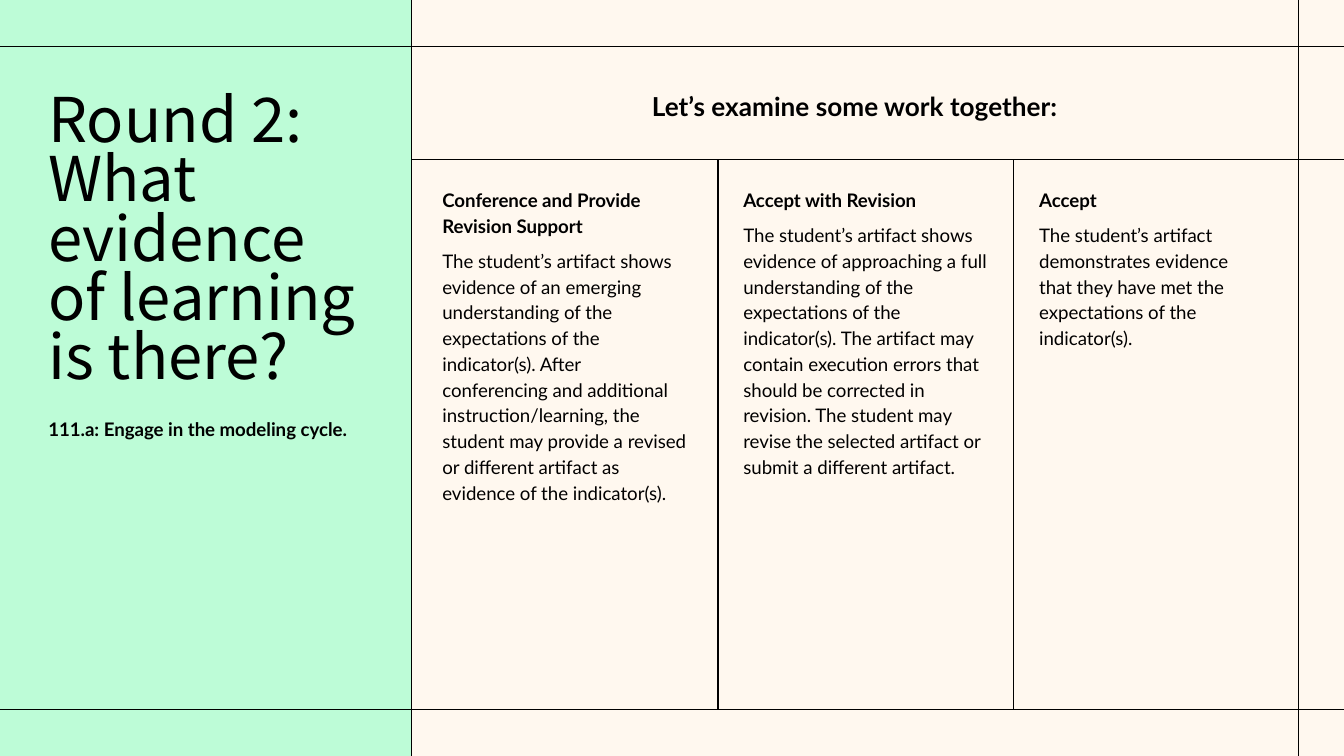
"""Build the slide on evidence of learning, with three outcome columns."""
from lxml.etree import SubElement
from pptx import Presentation
from pptx.dml.color import RGBColor
from pptx.enum.shapes import MSO_CONNECTOR as Connector, MSO_SHAPE as Shape
from pptx.enum.text import MSO_AUTO_SIZE as AutoSize, PP_ALIGN as Align
from pptx.oxml.ns import qn
from pptx.util import Pt

COLORS = {"background": "FFF8EF", "panel": "BDFCD7", "ink": "000000"}
BODY_FONT, TITLE_FONT = "Lato", "Noto Sans CJK KR"

TITLE = ["Round 2:", "What evidence of learning is there?"]
INDICATOR = "111.a: Engage in the modeling cycle."
HEADING = "Let’s examine some work together:"
OUTCOMES = [
    ("Conference and Provide Revision Support",
     "The student’s artifact shows evidence of an emerging understanding of the "
     "expectations of the indicator(s). After conferencing and additional "
     "instruction/learning, the student may provide a revised or different "
     "artifact as evidence of the indicator(s).", 184.3),
    ("Accept with Revision",
     "The student’s artifact shows evidence of approaching a full understanding "
     "of the expectations of the indicator(s). The artifact may contain execution "
     "errors that should be corrected in revision. The student may revise the "
     "selected artifact or submit a different artifact.", 170.6),
    ("Accept",
     "The student’s artifact demonstrates evidence \nthat they have met the "
     "expectations of the indicator(s).", 87.1),
]

WIDTH, HEIGHT = 720, 405
PANEL_WIDTH = 220.3
TOP_RULE, HEADING_RULE, BOTTOM_RULE = 25, 85.5, 380.2
RIGHT_RULE = 695.5
FIRST_DIVIDER, FIRST_COLUMN, COLUMN_STEP = 384.6, 237, 158.5
COLUMN_LEFTS = [FIRST_COLUMN, 398.2, 398.2 + COLUMN_STEP]


def color(name):
    return RGBColor.from_string(COLORS[name])


def add_rule(slide, x1, y1, x2, y2):
    rule = slide.shapes.add_connector(Connector.STRAIGHT, Pt(x1), Pt(y1), Pt(x2), Pt(y2))
    rule.line.color.rgb = color("ink")
    rule.line.width = Pt(0.75)
    SubElement(rule._element.spPr, qn("a:effectLst"))


def add_text_box(slide, left, top, width, height):
    frame = slide.shapes.add_textbox(Pt(left), Pt(top), Pt(width), Pt(height)).text_frame
    frame.word_wrap = True
    frame.auto_size = AutoSize.SHAPE_TO_FIT_TEXT
    frame.margin_left = frame.margin_right = frame.margin_top = frame.margin_bottom = 0
    return frame


def add_paragraph(frame, text, size, font=BODY_FONT, bold=False, spacing=None,
                  gap=None, align=None):
    first = frame.paragraphs[0]
    paragraph = frame.add_paragraph() if first.runs else first
    paragraph.alignment = align
    paragraph.line_spacing = spacing
    if gap is not None:
        paragraph.space_before = paragraph.space_after = Pt(gap)
    for index, line in enumerate(text.split("\n")):
        if index:
            paragraph.add_line_break()
        run = paragraph.add_run()
        run.text = line
        run.font.name = font
        run.font.size = Pt(size)
        run.font.bold = bold
        run.font.color.rgb = color("ink")


def main():
    presentation = Presentation()
    presentation.slide_width, presentation.slide_height = Pt(WIDTH), Pt(HEIGHT)
    slide = presentation.slides.add_slide(presentation.slide_layouts[6])
    slide.background.fill.solid()
    slide.background.fill.fore_color.rgb = color("background")

    add_rule(slide, 0, HEADING_RULE, WIDTH, HEADING_RULE)
    heading = add_text_box(slide, 245.5, 48.2, 424.8, 17.3)
    add_paragraph(heading, HEADING, 14, bold=True, align=Align.CENTER)
    add_rule(slide, RIGHT_RULE, 0, RIGHT_RULE, HEIGHT)

    panel = slide.shapes.add_shape(Shape.RECTANGLE, 0, 0, Pt(PANEL_WIDTH), Pt(HEIGHT))
    panel.fill.solid()
    panel.fill.fore_color.rgb = color("panel")
    panel.line.fill.background()
    panel.shadow.inherit = False

    for y in (BOTTOM_RULE, TOP_RULE):
        add_rule(slide, 0, y, WIDTH, y)
    add_rule(slide, PANEL_WIDTH, 0, PANEL_WIDTH, HEIGHT)

    title = add_text_box(slide, 25.9, 51.1, 170.6, 159.8)
    for line in TITLE:
        add_paragraph(title, line, 33, font=TITLE_FONT, spacing=0.8)
    indicator = add_text_box(slide, 25.9, 223.9, 170.6, 12.2)
    add_paragraph(indicator, INDICATOR, 10, bold=True)

    for index in range(len(OUTCOMES) - 1):
        x = FIRST_DIVIDER + index * COLUMN_STEP
        add_rule(slide, x, HEADING_RULE, x, BOTTOM_RULE)
    for left, (name, description, height) in zip(COLUMN_LEFTS, OUTCOMES):
        column = add_text_box(slide, left, 99.4, 131, height)
        add_paragraph(column, name, 10, bold=True, spacing=1.15)
        add_paragraph(column, description, 10, spacing=1.15, gap=5)

    presentation.save("out.pptx")


if __name__ == "__main__":
    main()
